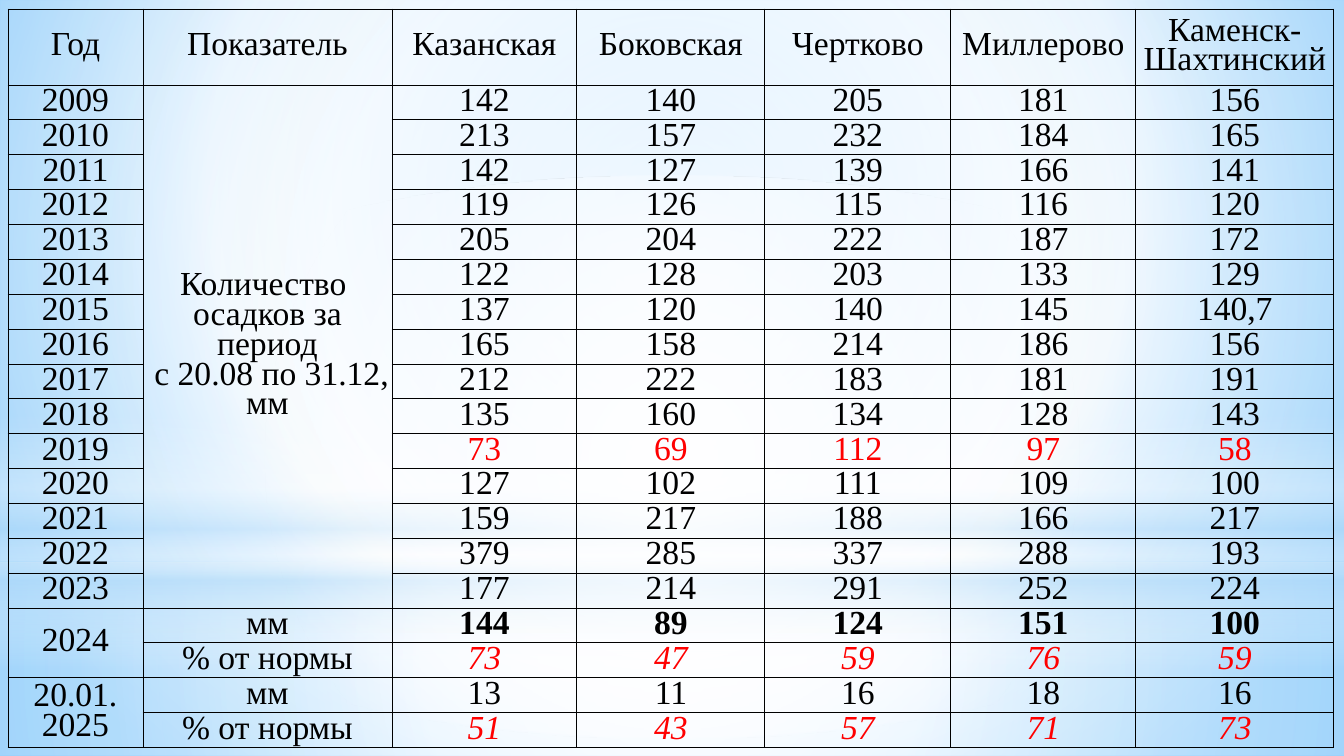
from collections import namedtuple
from dataclasses import dataclass

from pptx import Presentation
from pptx.dml.color import RGBColor
from pptx.enum.shapes import MSO_SHAPE as Preset
from pptx.enum.text import MSO_ANCHOR as Anchor, PP_ALIGN as Align
from pptx.oxml import parse_xml
from pptx.oxml.ns import nsdecls, qn
from pptx.util import Emu, Pt

Box = namedtuple("Box", "left top width height")
Row = namedtuple("Row", "year label values style", defaults=("", "", "", "plain"))


@dataclass(frozen=True)
class Theme:
    """Colours, type and line settings of the slide."""
    font: str = "Times New Roman"
    size: int = 18
    leading: float = 0.8
    ink: str = "000000"
    alert: str = "FF0000"
    white: str = "FFFFFF"
    haze: str = "B4DCFA"
    sky: str = "9ED5FF"
    deep: str = "5BB9FF"
    border: float = 0.5


THEME = Theme()
PAGE = Box(0, 0, 1344, 756)
TABLE = Box(8, 9, 1326, 739)
COLUMNS = (135, 249, 185, 188, 186, 185, 198)
HEADER_HEIGHT = 76
CENTRE = (50, 50, 50, 50)
STYLES = {
    "plain": (THEME.ink, False, False),
    "dry": (THEME.alert, False, False),
    "total": (THEME.ink, True, False),
    "share": (THEME.alert, False, True),
}
HEADINGS = ("Год", "Показатель", "Казанская", "Боковская", "Чертково",
            "Миллерово", "Каменск-Шахтинский")
PERIOD = "Количество \nосадков за период\n с 20.08 по 31.12, мм"
ROWS = (
    Row("2009", PERIOD, "142 140 205 181 156"),
    Row("2010", "", "213 157 232 184 165"),
    Row("2011", "", "142 127 139 166 141"),
    Row("2012", "", "119 126 115 116 120"),
    Row("2013", "", "205 204 222 187 172"),
    Row("2014", "", "122 128 203 133 129"),
    Row("2015", "", "137 120 140 145 140,7"),
    Row("2016", "", "165 158 214 186 156"),
    Row("2017", "", "212 222 183 181 191"),
    Row("2018", "", "135 160 134 128 143"),
    Row("2019", "", "73 69 112 97 58", "dry"),
    Row("2020", "", "127 102 111 109 100"),
    Row("2021", "", "159 217 188 166 217"),
    Row("2022", "", "379 285 337 288 193"),
    Row("2023", "", "177 214 291 252 224"),
    Row("2024", "мм", "144 89 124 151 100", "total"),
    Row("", "% от нормы", "73 47 59 76 59", "share"),
    Row("20.01.\n2025", "мм", "13 11 16 18 16"),
    Row("", "% от нормы", "51 43 57 71 73", "share"),
)
MERGES = (((1, 1), (15, 1)), ((16, 0), (17, 0)), ((18, 0), (19, 0)))


def px(length):
    """Turn pixels into EMU."""
    return Emu(round(length * 914400 / 134.4))


def set_gradient(fill, holder, stops, focus=None):
    """Give the holder a circular gradient, or a downward one without a focus."""
    fill.solid()
    marks = "".join(
        f'<a:gs pos="{place * 1000}"><a:srgbClr val="{colour}">'
        f'<a:alpha val="{opacity * 1000}"/></a:srgbClr></a:gs>'
        for place, colour, opacity in stops)
    if focus:
        sides = " ".join(f'{side}="{value * 1000}"' for side, value in zip("ltrb", focus))
        course = f'<a:path path="circle"><a:fillToRect {sides}/></a:path>'
    else:
        course = '<a:lin ang="5400000" scaled="0"/>'
    gradient = parse_xml(f'<a:gradFill {nsdecls("a")} rotWithShape="1">'
                         f'<a:gsLst>{marks}</a:gsLst>{course}</a:gradFill>')
    holder.replace(holder.find(qn("a:solidFill")), gradient)


def add_glow(page, preset, box, stops, focus=None):
    """Add one translucent gradient shape in the box."""
    glow = page.shapes.add_shape(preset, *map(px, box))
    glow.shadow.inherit = False
    glow.line.fill.background()
    set_gradient(glow.fill, glow.element.spPr, stops, focus)
    return glow


def draw_backdrop(page, box):
    """Fill the background and place the sky, ground and horizon on the layout."""
    white, haze = THEME.white, THEME.haze
    background = page.background.fill
    background.solid()
    set_gradient(background, next(page.element.iter(qn("p:bgPr"))),
                 ((0, THEME.sky, 100), (60, white, 100), (100, THEME.deep, 100)),
                 (20, 10, 20, 60))
    layout = page.slide_layout
    for holder in list(layout.placeholders):
        layout.shapes.element.remove(holder.element)

    def band(top, height):
        """Return a full-width strip of the box."""
        return Box(box.left, box.top + top, box.width, height)

    glows = (
        add_glow(page, Preset.RECTANGLE, band(563, 193),
                 ((0, white, 91), (37, white, 76), (100, haze, 79)), CENTRE),
        add_glow(page, Preset.RECTANGLE, band(0, 563),
                 ((0, white, 89), (48, white, 62), (100, haze, 79)), CENTRE),
        add_glow(page, Preset.RECTANGLE, band(415, 253),
                 ((0, white, 0), (29, white, 30), (45, haze, 40),
                  (55, white, 26), (65, haze, 60), (100, white, 0))),
        add_glow(page, Preset.OVAL, band(176, 563),
                 ((0, white, 100), (56, white, 0)), CENTRE),
    )
    for glow in glows:
        layout.shapes.element.append(glow.element)


def format_cell(cell):
    """Clear the fill and margins, centre the cell and rule its four sides."""
    properties = cell._tc.get_or_add_tcPr()
    for side in "LRTB":
        properties.append(parse_xml(
            f'<a:ln{side} {nsdecls("a")} w="{Pt(THEME.border)}"><a:solidFill>'
            f'<a:srgbClr val="{THEME.ink}"/></a:solidFill></a:ln{side}>'))
    cell.fill.background()
    cell.margin_left = cell.margin_right = cell.margin_top = cell.margin_bottom = 0
    cell.vertical_anchor = Anchor.MIDDLE


def write_cell(cell, text, style):
    """Write each line of the text as a centred paragraph."""
    colour, bold, italic = STYLES[style]
    frame = cell.text_frame
    for index, line in enumerate(text.split("\n")):
        para = frame.add_paragraph() if index else frame.paragraphs[0]
        para.alignment = Align.CENTER
        para.line_spacing = THEME.leading
        para.font.size = Pt(THEME.size)
        if line:
            span = para.add_run()
            span.text = line
            span.font.name = THEME.font
            span.font.size = Pt(THEME.size)
            span.font.bold, span.font.italic = bold, italic
            span.font.color.rgb = RGBColor.from_string(colour)


def draw_rainfall_table(page, box):
    """Place the rainfall table in the box."""
    table = page.shapes.add_table(len(ROWS) + 1, len(COLUMNS), *map(px, box)).table
    table.first_row = table.horz_banding = False
    for column, width in zip(table.columns, COLUMNS):
        column.width = px(width)
    for index, row in enumerate(table.rows):
        row.height = px((box.height - HEADER_HEIGHT) / len(ROWS) if index else HEADER_HEIGHT)
    for cell in table.iter_cells():
        format_cell(cell)
    for column, heading in enumerate(HEADINGS):
        write_cell(table.cell(0, column), heading, "plain")
    for index, record in enumerate(ROWS, 1):
        texts = (record.year, record.label, *record.values.split())
        for column, text in enumerate(texts):
            style = record.style if column > 1 else "plain"
            write_cell(table.cell(index, column), text, style)
    for first, last in MERGES:
        table.cell(*first).merge(table.cell(*last))


def main():
    """Build and save the deck."""
    deck = Presentation()
    deck.slide_width, deck.slide_height = px(PAGE.width), px(PAGE.height)
    page = deck.slides.add_slide(deck.slide_layouts[6])
    draw_backdrop(page, PAGE)
    draw_rainfall_table(page, TABLE)
    deck.save("out.pptx")


if __name__ == "__main__":
    main()
